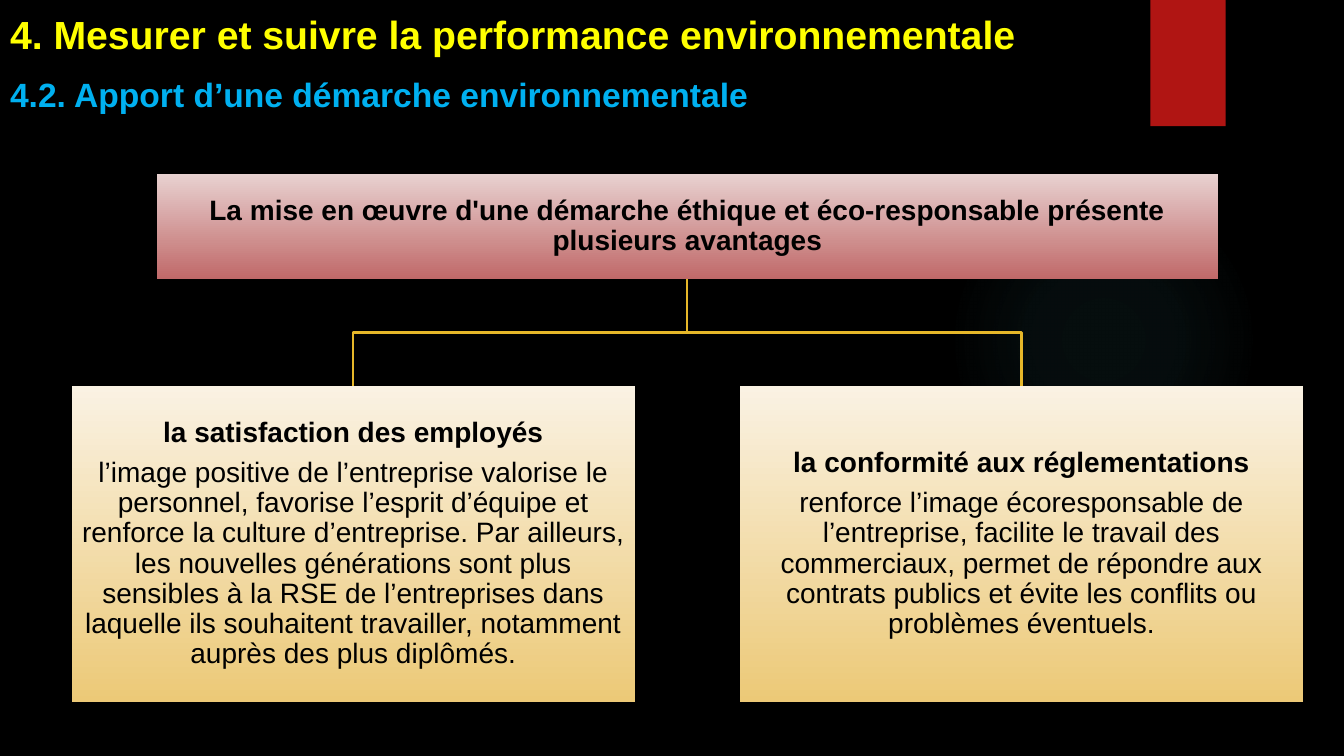
from dataclasses import dataclass

from lxml.etree import SubElement
from pptx import Presentation
from pptx.dml.color import RGBColor
from pptx.enum.shapes import MSO_SHAPE
from pptx.enum.text import MSO_ANCHOR, MSO_AUTO_SIZE, PP_ALIGN
from pptx.oxml.ns import qn
from pptx.util import Cm, Pt

HEADINGS = [
    "4. Mesurer et suivre la performance environnementale",
    "4.2. Apport d’une démarche environnementale",
]
STATEMENT = "La mise en œuvre d'une démarche éthique et éco-responsable présente plusieurs avantages"
BENEFITS = [
    (
        "la satisfaction des employés",
        "l’image positive de l’entreprise valorise le personnel, favorise l’esprit d’équipe et "
        "renforce la culture d’entreprise. Par ailleurs, les nouvelles générations sont plus "
        "sensibles à la RSE de l’entreprises dans laquelle ils souhaitent travailler, notamment "
        "auprès des plus diplômés.",
    ),
    (
        "la conformité aux réglementations",
        "renforce l’image écoresponsable de l’entreprise, facilite le travail des commerciaux, "
        "permet de répondre aux contrats publics et évite les conflits ou problèmes éventuels.",
    ),
]


@dataclass(frozen=True)
class Theme:
    font: str = "Arial"
    background: str = "000000"
    text: str = "000000"
    headings: tuple = (("FFFF00", 28), ("00B0F0", 24))
    body_size: int = 20
    ribbon: str = "B01513"
    line: str = "E6B729"
    statement_fill: tuple = ("E8D1D0", "C06969")
    benefit_fill: tuple = ("FAF2E3", "ECC977")
    glow: str = "50B9C1"
    glow_stops: tuple = ((0, 7), (36, 6), (69, 0))


THEME = Theme()
STATEMENT_TOP, STATEMENT_WIDTH, STATEMENT_HEIGHT = Cm(4.38), Cm(26.74), Cm(2.65)
BENEFIT_LEFT, BENEFIT_TOP = Cm(1.81), Cm(9.73)
BENEFIT_WIDTH, BENEFIT_HEIGHT, BENEFIT_GAP = Cm(14.19), Cm(7.96), Cm(2.65)


def color(value):
    return RGBColor.from_string(value)


def format_text(paragraph, size, value, bold):
    font = paragraph.font
    font.name, font.size, font.bold = THEME.font, Pt(size), bold
    font.color.rgb = color(value)


def add_plain_shape(slide, kind, left, top, width, height):
    shape = slide.shapes.add_shape(kind, left, top, width, height)
    shape.shadow.inherit = False
    shape.line.fill.background()
    return shape


def add_glow(slide):
    glow = add_plain_shape(slide, MSO_SHAPE.OVAL, Cm(23.9), Cm(4.65), Cm(7.82), Cm(7.82))
    glow.fill.gradient()
    gradient = glow._element.spPr.find(qn("a:gradFill"))
    for child in list(gradient):
        gradient.remove(child)
    stops = SubElement(gradient, qn("a:gsLst"))
    for position, opacity in THEME.glow_stops:
        stop = SubElement(stops, qn("a:gs"), pos=str(position * 1000))
        stop_color = SubElement(stop, qn("a:srgbClr"), val=THEME.glow)
        SubElement(stop_color, qn("a:alpha"), val=str(opacity * 1000))
    radial = SubElement(gradient, qn("a:path"), path="circle")
    SubElement(radial, qn("a:fillToRect"), l="50000", t="50000", r="50000", b="50000")


def add_ribbon(slide):
    ribbon = add_plain_shape(slide, MSO_SHAPE.RECTANGLE, Cm(28.99), 0, Cm(1.9), Cm(3.18))
    ribbon.fill.solid()
    ribbon.fill.fore_color.rgb = color(THEME.ribbon)


def fill_title(title):
    title.left, title.top, title.width, title.height = Cm(0), Cm(0.13), Cm(32.23), Cm(2.9)
    frame = title.text_frame
    frame.text = "\n".join(HEADINGS)
    frame.word_wrap = True
    frame.auto_size = MSO_AUTO_SIZE.NONE
    frame.vertical_anchor = MSO_ANCHOR.TOP
    for index, (paragraph, (value, size)) in enumerate(zip(frame.paragraphs, THEME.headings)):
        paragraph.alignment = PP_ALIGN.LEFT
        paragraph.space_before = Pt(12 if index else 0)
        format_text(paragraph, size, value, True)


def add_box(slide, left, top, width, height, texts, fill):
    box = add_plain_shape(slide, MSO_SHAPE.RECTANGLE, left, top, width, height)
    box.fill.gradient()
    box.fill.gradient_angle = 270
    for stop, value in zip(box.fill.gradient_stops, fill):
        stop.color.rgb = color(value)
    frame = box.text_frame
    frame.text = "\n".join(texts)
    frame.word_wrap = True
    frame.vertical_anchor = MSO_ANCHOR.MIDDLE
    frame.margin_left = frame.margin_right = frame.margin_top = frame.margin_bottom = Cm(0.03)
    for index, paragraph in enumerate(frame.paragraphs):
        paragraph.alignment = PP_ALIGN.CENTER
        paragraph.line_spacing = 0.9
        paragraph.space_after = Pt(7)
        format_text(paragraph, THEME.body_size, THEME.text, index == 0)
    return box


def add_branch(slide, parent, child):
    start_x, start_y = parent.left + parent.width // 2, parent.top + parent.height
    end_x, end_y = child.left + child.width // 2, child.top
    middle_y = (start_y + end_y) // 2
    builder = slide.shapes.build_freeform(start_x, start_y)
    builder.add_line_segments(
        [(start_x, middle_y), (end_x, middle_y), (end_x, end_y)], close=False
    )
    branch = builder.convert_to_shape()
    branch.shadow.inherit = False
    branch.fill.background()
    branch.line.color.rgb = color(THEME.line)
    branch.line.width = Pt(1.5)


def main():
    presentation = Presentation()
    presentation.slide_width, presentation.slide_height = Cm(33.87), Cm(19.05)
    slide = presentation.slides.add_slide(presentation.slide_layouts[5])
    slide.background.fill.solid()
    slide.background.fill.fore_color.rgb = color(THEME.background)

    add_glow(slide)
    add_ribbon(slide)
    fill_title(slide.shapes.title)

    row_width = len(BENEFITS) * BENEFIT_WIDTH + (len(BENEFITS) - 1) * BENEFIT_GAP
    statement_left = BENEFIT_LEFT + (row_width - STATEMENT_WIDTH) // 2
    statement = add_box(
        slide, statement_left, STATEMENT_TOP, STATEMENT_WIDTH, STATEMENT_HEIGHT,
        [STATEMENT], THEME.statement_fill,
    )
    for index, texts in enumerate(BENEFITS):
        left = BENEFIT_LEFT + index * (BENEFIT_WIDTH + BENEFIT_GAP)
        benefit = add_box(
            slide, left, BENEFIT_TOP, BENEFIT_WIDTH, BENEFIT_HEIGHT, texts, THEME.benefit_fill
        )
        add_branch(slide, statement, benefit)

    presentation.save("out.pptx")


if __name__ == "__main__":
    main()
